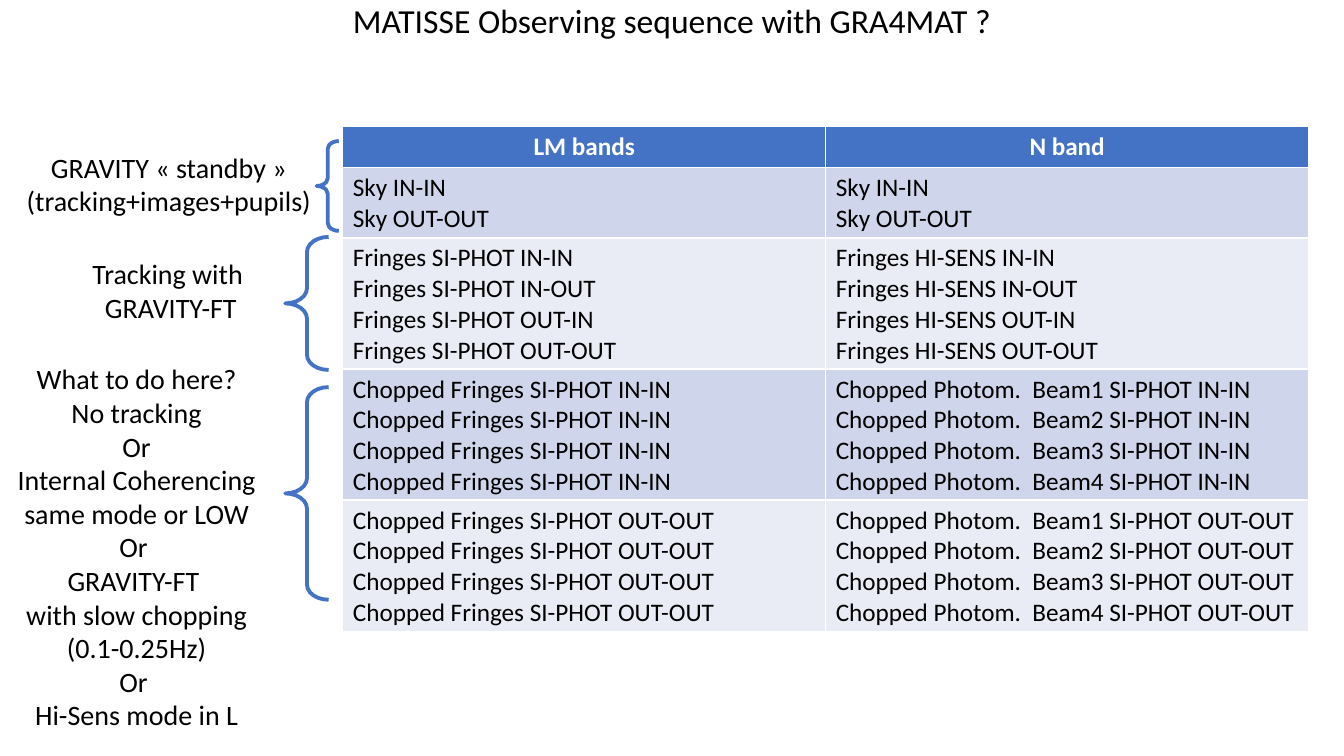
from pptx import Presentation
from pptx.dml.color import RGBColor
from pptx.enum.shapes import MSO_SHAPE as Shape
from pptx.enum.text import PP_ALIGN as Align
from pptx.util import Inches, Pt

FONT = "Calibri"
COLORS = {
    "text": "000000",
    "header_text": "FFFFFF",
    "accent": "4472C4",
    "band_dark": "CFD5EA",
    "band_light": "E9EBF5",
}
TITLE = "MATISSE Observing sequence with GRA4MAT ?"
HEADINGS = ["LM bands", "N band"]
POSITIONS = ["IN-IN", "IN-OUT", "OUT-IN", "OUT-OUT"]
BEAMS = range(1, 5)


def chopped_step(position):
    """Return the LM and N lines of a chopped step at one position."""
    return (
        [f"Chopped Fringes SI-PHOT {position}" for beam in BEAMS],
        [f"Chopped Photom.  Beam{beam} SI-PHOT {position}" for beam in BEAMS],
    )


SKY = ["Sky IN-IN", "Sky OUT-OUT"]
STEPS = [
    (SKY, SKY),
    tuple([f"Fringes {mode} {position}" for position in POSITIONS]
          for mode in ("SI-PHOT", "HI-SENS")),
    chopped_step("IN-IN"),
    chopped_step("OUT-OUT"),
]
STANDBY = ["GRAVITY «\u00a0standby\u00a0»", "(tracking+images+pupils)"]
TRACKING = ["Tracking with ", "GRAVITY-FT"]
OPTIONS = [
    "What to do here?",
    "No tracking",
    "Or",
    "Internal Coherencing",
    "same mode or LOW",
    "Or ",
    "GRAVITY-FT ",
    "with slow chopping (0.1-0.25Hz)",
    "Or ",
    "Hi-Sens mode in L",
]
PHASES = [
    (STANDBY, (0.15, 1.44, 3.05, 0.77), False, (3.14, 1.4, 0.22, 0.89)),
    (TRACKING, (0.81, 2.5, 1.77, 0.77), False, (2.83, 2.35, 0.43, 1.32)),
    (OPTIONS, (-0.12, 3.54, 2.95, 3.8), True, (2.83, 3.84, 0.43, 2.11)),
]


def rgb(name):
    """Return the named colour."""
    return RGBColor.from_string(COLORS[name])


def write_lines(frame, lines, size, align, color="text", bold=False):
    """Fill a text frame with one paragraph per line."""
    frame.text = "\n".join(lines)
    for line in frame.paragraphs:
        line.alignment = align
        line.font.name = FONT
        line.font.size = Pt(size)
        line.font.bold = bold
        line.font.color.rgb = rgb(color)


def add_label(slide, box, lines, size, wrap=True):
    """Add centred text in the box and return its frame."""
    frame = slide.shapes.add_textbox(*map(Inches, box)).text_frame
    frame.word_wrap = wrap
    write_lines(frame, lines, size, Align.CENTER)
    return frame


def add_title(slide, box):
    """Add the slide heading."""
    heading = add_label(slide, box, [TITLE], 24).paragraphs[0]
    heading.line_spacing = 0.9
    heading.space_before = Pt(10)


def add_phase(slide, lines, label_box, wrap, brace_box):
    """Add a phase label and the brace tying it to the table."""
    add_label(slide, label_box, lines, 20, wrap)
    brace = slide.shapes.add_shape(Shape.LEFT_BRACE, *map(Inches, brace_box))
    brace.adjustments[0] = 0.35
    brace.shadow.inherit = False
    brace.fill.background()
    brace.line.color.rgb = rgb("accent")
    brace.line.width = Pt(2.75)


def fill_cell(cell, fill, lines, **style):
    """Colour a table cell and write its lines."""
    cell.fill.solid()
    cell.fill.fore_color.rgb = rgb(fill)
    write_lines(cell.text_frame, lines, 18, **style)


def add_sequence(slide, box):
    """Add the table of observing steps for both bands."""
    sequence = slide.shapes.add_table(
        len(STEPS) + 1, len(HEADINGS), *map(Inches, box)).table
    for row in sequence.rows:
        row.height = Inches(0.41)
    for column, heading in enumerate(HEADINGS):
        fill_cell(sequence.cell(0, column), "accent", [heading],
                  align=Align.CENTER, color="header_text", bold=True)
        for row, step in enumerate(STEPS, start=1):
            band = "band_dark" if row % 2 else "band_light"
            fill_cell(sequence.cell(row, column), band, step[column],
                      align=Align.LEFT)


def main():
    """Build and save the slide."""
    deck = Presentation()
    deck.slide_width, deck.slide_height = Inches(13.33), Inches(7.5)
    slide = deck.slides.add_slide(deck.slide_layouts[6])
    add_title(slide, (0, 0, 13.33, 0.6))
    add_sequence(slide, (3.4, 1.25, 9.58, 5.01))
    for phase in PHASES:
        add_phase(slide, *phase)
    deck.save("out.pptx")


if __name__ == "__main__":
    main()
